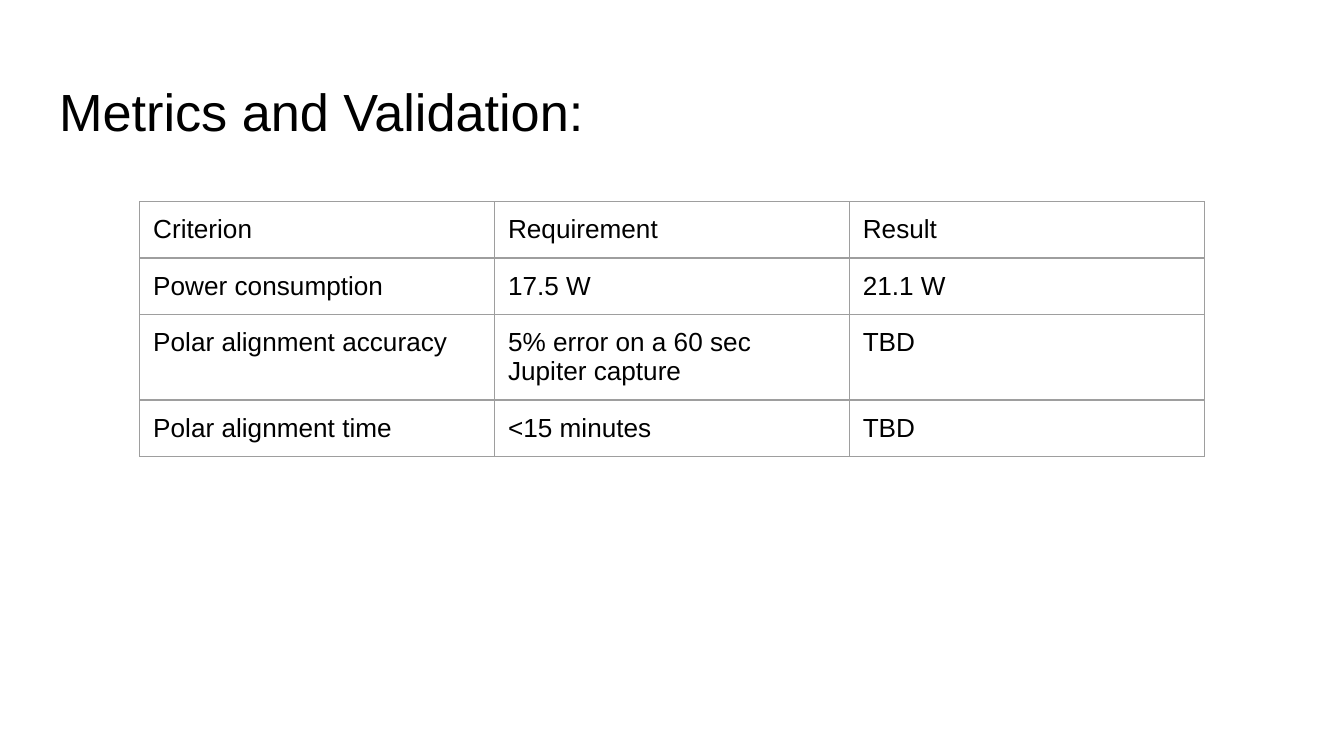
from lxml import etree
from pptx import Presentation
from pptx import util as u
from pptx.dml.color import RGBColor
from pptx.enum import text
from pptx.oxml import ns

BLACK = RGBColor(0x00, 0x00, 0x00)
GREY = RGBColor(0x9E, 0x9E, 0x9E)
WHITE = RGBColor(0xFF, 0xFF, 0xFF)

METRICS = [
    ("Criterion", "Requirement", "Result"),
    ("Power consumption", "17.5 W", "21.1 W"),
    ("Polar alignment accuracy", "5% error on a 60 sec Jupiter capture", "TBD"),
    ("Polar alignment time", "<15 minutes", "TBD"),
]


def write(frame, words, size=14, color=BLACK, font="Arial"):
    para = frame.paragraphs[0]
    para.alignment = text.PP_ALIGN.LEFT
    span = para.add_run()
    span.text = words
    span.font.name = font
    span.font.size = u.Pt(size)
    span.font.bold = False
    span.font.color.rgb = color


def set_margins(target, margin):
    target.margin_left = target.margin_right = margin
    target.margin_top = target.margin_bottom = margin


def add_borders(cell, color, width):
    """Draw all four sides; the schema wants them ahead of the fill."""
    properties = cell._tc.get_or_add_tcPr()
    for position, side in enumerate(("lnL", "lnR", "lnT", "lnB")):
        line = etree.Element(ns.qn(f"a:{side}"), w=str(u.Pt(width)))
        fill = etree.SubElement(line, ns.qn("a:solidFill"))
        etree.SubElement(fill, ns.qn("a:srgbClr"), val=str(color))
        properties.insert(position, line)


class SlideBuilder:
    margin = u.Inches(0.1)

    def __init__(self, deck):
        self.page = deck.slides.add_slide(deck.slide_layouts[5])
        self.page.background.fill.solid()
        self.page.background.fill.fore_color.rgb = WHITE

    def title(self, words, left, top, width, height):
        box = self.page.shapes.title
        box.left, box.top = u.Inches(left), u.Inches(top)
        box.width, box.height = u.Inches(width), u.Inches(height)
        frame = box.text_frame
        frame.word_wrap = True
        frame.auto_size = text.MSO_AUTO_SIZE.NONE
        frame.vertical_anchor = text.MSO_ANCHOR.TOP
        set_margins(frame, self.margin)
        write(frame, words, size=28)

    def table(self, rows, left, top, column_width, row_height):
        columns = len(rows[0])
        grid = self.page.shapes.add_table(
            len(rows), columns, u.Inches(left), u.Inches(top),
            u.Inches(column_width * columns), u.Inches(row_height * len(rows)),
        ).table
        grid.first_row = grid.horz_banding = False
        for r, row in enumerate(rows):
            for c, words in enumerate(row):
                cell = grid.cell(r, c)
                cell.fill.background()
                set_margins(cell, self.margin)
                add_borders(cell, GREY, 0.75)
                write(cell.text_frame, words)


def main():
    deck = Presentation()
    deck.slide_width = u.Inches(10)
    deck.slide_height = u.Inches(10 * 9 / 16)
    builder = SlideBuilder(deck)
    builder.title("Metrics and Validation:", 0.34, 0.49, 9.32, 0.63)
    builder.table(METRICS, 1.04, 1.5, column_width=2.64, row_height=0.42)
    deck.save("out.pptx")


if __name__ == "__main__":
    main()
